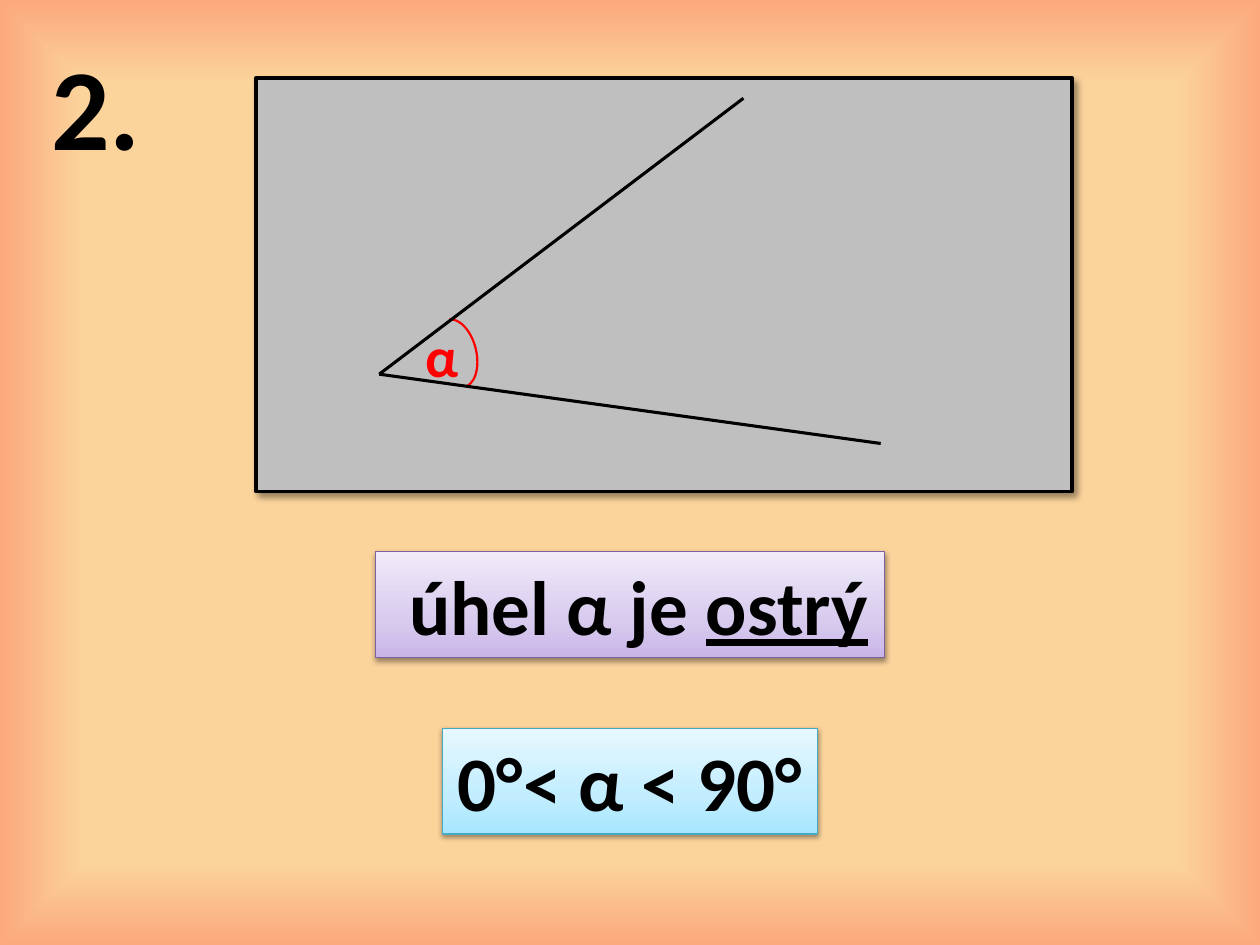
from lxml import etree
from pptx import Presentation
from pptx.dml.color import RGBColor
from pptx.enum import shapes, text
from pptx.oxml import parse_xml
from pptx.oxml.ns import nsdecls, qn
from pptx.util import Inches, Pt

COLORS = {
    "ink": "000000", "angle": "FF0000", "board": "BFBFBF",
    "paper": "FBD49C", "edge": "FBA97D",
    "violet line": "7D60A0", "blue line": "46AAC5",
}
VIOLET = [(0, "C9B5E8"), (35, "D8CBEE"), (100, "F0EAF9")]
BLUE = [(0, "A7E6FF"), (35, "C1EDFF"), (100, "E7F8FF")]
UPWARD = '<a:lin ang="16200000" scaled="0"/>'
FROM_CENTRE = ('<a:path path="rect"><a:fillToRect l="50000" t="50000" '
               'r="50000" b="50000"/></a:path>')


def color(name):
    return RGBColor.from_string(COLORS[name])


def set_gradient(fill, stops, direction):
    """Replace the stops and direction of a gradient fill."""
    fill.gradient()
    gradient = fill._fill._gradFill
    for child in list(gradient):
        gradient.remove(child)
    marks = "".join(f'<a:gs pos="{place * 1000}"><a:srgbClr val="{value}"/></a:gs>'
                    for place, value in stops)
    source = f'<a:gradFill {nsdecls("a")}><a:gsLst>{marks}</a:gsLst>{direction}</a:gradFill>'
    gradient.extend(list(parse_xml(source)))


def add_shadow(shape, alpha, blur, distance, angle):
    shape.shadow.inherit = False
    effects = shape._element.spPr.find(qn("a:effectLst"))
    effects.append(parse_xml(
        f'<a:outerShdw {nsdecls("a")} blurRad="{Pt(blur)}" dist="{Pt(distance)}" '
        f'dir="{angle * 60000}" rotWithShape="0"><a:srgbClr val="{COLORS["ink"]}">'
        f'<a:alpha val="{alpha * 1000}"/></a:srgbClr></a:outerShdw>'))


class AngleSlide:
    font = "Calibri"

    def __init__(self, deck):
        self.page = deck.slides.add_slide(deck.slide_layouts[6])
        set_gradient(self.page.background.fill,
                     [(0, COLORS["paper"]), (82, COLORS["paper"]), (100, COLORS["edge"])],
                     FROM_CENTRE)

    def shape(self, kind, place, line, width):
        shape = self.page.shapes.add_shape(kind, *map(Inches, place))
        shape.shadow.inherit = False
        shape.line.color.rgb = color(line)
        shape.line.width = Pt(width)
        return shape

    def board(self, place):
        board = self.shape(shapes.MSO_SHAPE.RECTANGLE, place, "ink", 2)
        board.fill.solid()
        board.fill.fore_color.rgb = color("board")
        add_shadow(board, 40, 4, 3, 45)

    def arc(self, place, rotation, start, end):
        arc = self.shape(shapes.MSO_SHAPE.ARC, place, "angle", 1.25)
        arc.fill.background()
        arc.rotation = rotation
        arc.adjustments[0], arc.adjustments[1] = start, end

    def ray(self, start, end):
        ray = self.page.shapes.add_connector(
            shapes.MSO_CONNECTOR.STRAIGHT, *map(Inches, start + end))
        ray.line.color.rgb = color("ink")
        ray.line.width = Pt(1.75)
        etree.SubElement(ray._element.spPr, qn("a:effectLst"))

    def fill_text(self, box, parts, size, ink="ink", align=text.PP_ALIGN.LEFT):
        """Fill a box with one bold paragraph of (words, underlined) parts."""
        frame = box.text_frame
        frame.word_wrap = False
        frame.auto_size = text.MSO_AUTO_SIZE.SHAPE_TO_FIT_TEXT
        frame.vertical_anchor = text.MSO_ANCHOR.TOP
        para = frame.paragraphs[0]
        para.alignment = align
        para.font.name, para.font.size, para.font.bold = self.font, Pt(size), True
        para.font.color.rgb = color(ink)
        for words, underlined in parts:
            span = para.add_run()
            span.text = words
            if underlined:
                span.font.underline = True

    def label(self, place, words, size, ink="ink"):
        box = self.page.shapes.add_textbox(*map(Inches, place))
        self.fill_text(box, [(words, False)], size, ink)

    def answer(self, place, parts, stops, line):
        box = self.shape(shapes.MSO_SHAPE.RECTANGLE, place, line, 0.75)
        set_gradient(box.fill, stops, UPWARD)
        add_shadow(box, 38, 3.1, 1.6, 90)
        self.fill_text(box, parts, 44, align=text.PP_ALIGN.CENTER)


def main():
    deck = Presentation()
    deck.slide_width, deck.slide_height = Inches(10), Inches(7.5)
    slide = AngleSlide(deck)

    # Board with the angle and its two rays
    slide.board((2.03, 0.62, 6.48, 3.28))
    slide.arc((3.46, 2.53, 0.32, 0.55), 346.3, 163.14, 51.55)
    vertex = (3.01, 2.97)
    for end in ((5.9, 0.78), (6.99, 3.52)):
        slide.ray(end, vertex)

    # Task number and angle name
    slide.label((0.31, 0.23, 0.92, 1.21), "2.", 66)
    slide.label((3.28, 2.5, 0.49, 0.64), "α", 32, "angle")

    # Answers
    slide.answer((2.98, 4.38, 4.04, 0.84),
                 [(" úhel α je ", False), ("ostrý", True)], VIOLET, "violet line")
    slide.answer((3.51, 5.78, 2.98, 0.84),
                 [("0°< α < 90°", False)], BLUE, "blue line")

    deck.save("out.pptx")


if __name__ == "__main__":
    main()
